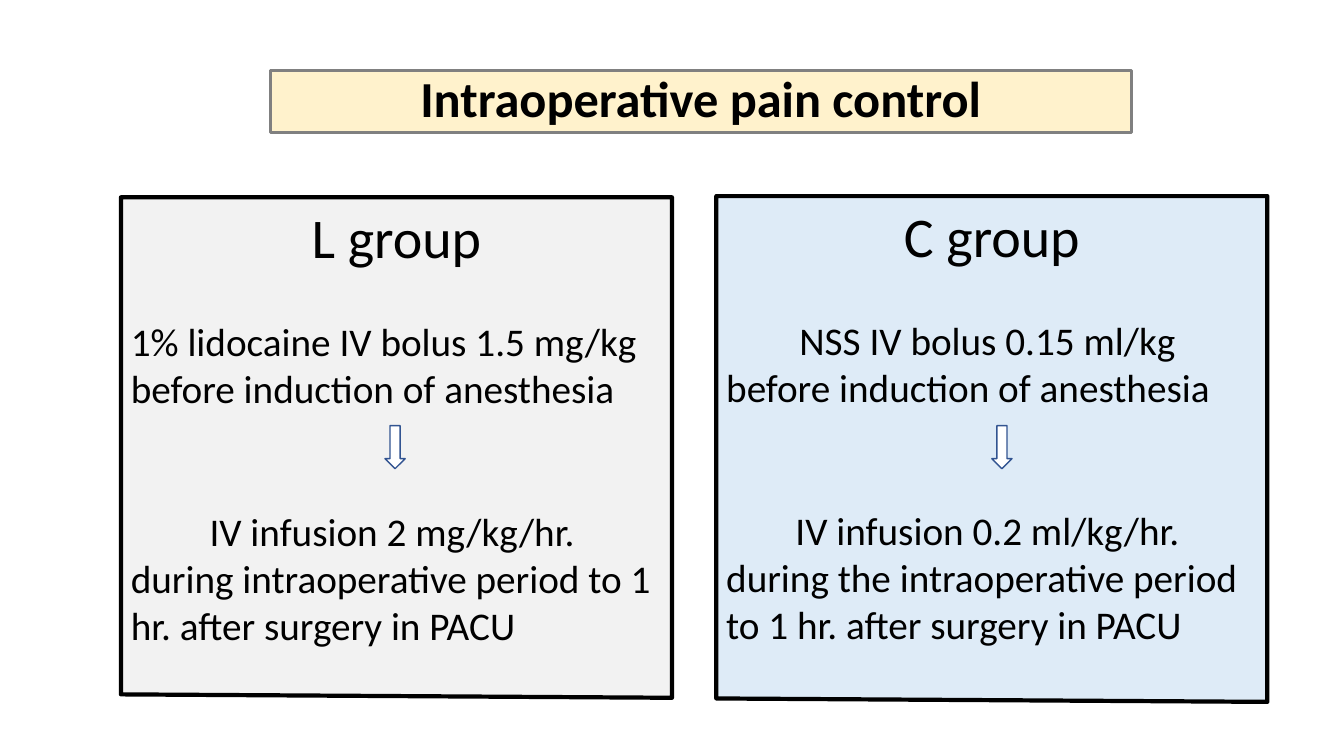
import dataclasses

import pptx
import pptx.dml.color
import pptx.enum.shapes
import pptx.enum.text
import pptx.util

SHAPES = pptx.enum.shapes.MSO_SHAPE
CENTER = pptx.enum.text.PP_ALIGN.CENTER
LEFT = pptx.enum.text.PP_ALIGN.LEFT


@dataclasses.dataclass(frozen=True)
class Theme:
    font: str = "Calibri"
    ink: str = "000000"
    title_fill: str = "FFF2CC"
    title_line: str = "808080"
    lidocaine_fill: str = "F2F2F2"
    control_fill: str = "DEEBF7"
    arrow_fill: str = "FFFFFF"
    arrow_line: str = "325491"
    title_size: int = 36
    group_size: int = 40
    body_size: int = 28
    body_line: float = 34.2  # height of one body line, in points


THEME = Theme()
WIDTH = pptx.util.Inches(13.33)
HEIGHT = pptx.util.Inches(7.5)

# Shared measures on a grid of 100 columns by 100 rows
PANEL_COLS = 41
PANEL_SLANT = 0.45
ARROW_TOP, ARROW_COLS, ARROW_ROWS = 56.3, 1.5, 5.7


def col(count):
    return round(WIDTH * count / 100)


def row(count):
    return round(HEIGHT * count / 100)


def rgb(value):
    return pptx.dml.color.RGBColor.from_string(value)


def paint(shape, fill, line, weight):
    shape.shadow.inherit = False
    shape.fill.solid()
    shape.fill.fore_color.rgb = rgb(fill)
    shape.line.color.rgb = rgb(line)
    shape.line.width = pptx.util.Pt(weight)


def write(paragraph, text, size, align, bold=False, lines_before=0):
    paragraph.text = text
    paragraph.alignment = align
    paragraph.space_before = pptx.util.Pt(lines_before * THEME.body_line)
    paragraph.font.name = THEME.font
    paragraph.font.size = pptx.util.Pt(size)
    paragraph.font.bold = bold
    paragraph.font.color.rgb = rgb(THEME.ink)


def add_title(slide, text):
    title = slide.shapes.add_shape(
        SHAPES.RECTANGLE, col(20.1), row(9.35), col(64.1), row(8.2))
    paint(title, THEME.title_fill, THEME.title_line, 2.25)
    title.text_frame.word_wrap = True
    title.text_frame.vertical_anchor = pptx.enum.text.MSO_ANCHOR.MIDDLE
    heading = title.text_frame.paragraphs[0]
    write(heading, text, THEME.title_size, CENTER, bold=True)
    heading.line_spacing = 0.9


def add_group_panel(slide, left, top, rows, fill, group, steps):
    """Panel with a slightly slanted base; steps are (text, align, lines before)."""
    right, bottom = left + PANEL_COLS, top + rows
    outline = slide.shapes.build_freeform(col(left), row(top))
    outline.add_line_segments([
        (col(right), row(top)),
        (col(right), row(bottom)),
        (col(left), row(bottom - PANEL_SLANT)),
    ], close=True)
    panel = outline.convert_to_shape()
    paint(panel, fill, THEME.ink, 3)
    frame = panel.text_frame
    frame.word_wrap = True
    frame.vertical_anchor = pptx.enum.text.MSO_ANCHOR.TOP
    write(frame.paragraphs[0], group, THEME.group_size, CENTER)
    for text, align, lines_before in steps:
        write(frame.add_paragraph(), text, THEME.body_size, align,
              lines_before=lines_before)


def add_step_arrow(slide, left):
    arrow = slide.shapes.add_shape(
        SHAPES.DOWN_ARROW, col(left), row(ARROW_TOP), col(ARROW_COLS), row(ARROW_ROWS))
    paint(arrow, THEME.arrow_fill, THEME.arrow_line, 1)


def main():
    deck = pptx.Presentation()
    deck.slide_width, deck.slide_height = WIDTH, HEIGHT
    slide = deck.slides.add_slide(deck.slide_layouts[6])

    # Treatment groups
    add_group_panel(slide, 9, 26.1, 66.2, THEME.lidocaine_fill, "L group", [
        ("1% lidocaine IV bolus 1.5 mg/kg before induction of anesthesia", LEFT, 1),
        ("IV infusion 2 mg/kg/hr. ", CENTER, 2),
        ("during intraoperative period to 1 hr. after surgery in PACU", LEFT, 0),
    ])
    add_group_panel(slide, 53.3, 25.95, 66.9, THEME.control_fill, "C group", [
        ("NSS IV bolus 0.15 ml/kg ", CENTER, 1),
        ("before induction of anesthesia", LEFT, 0),
        ("IV infusion 0.2 ml/kg/hr. ", CENTER, 2),
        ("during the intraoperative period to 1 hr. after surgery in PACU", LEFT, 0),
    ])

    # Heading
    add_title(slide, "Intraoperative pain control")

    # Bolus to infusion
    for left in (28.65, 73.8):
        add_step_arrow(slide, left)

    deck.save("out.pptx")


if __name__ == "__main__":
    main()
